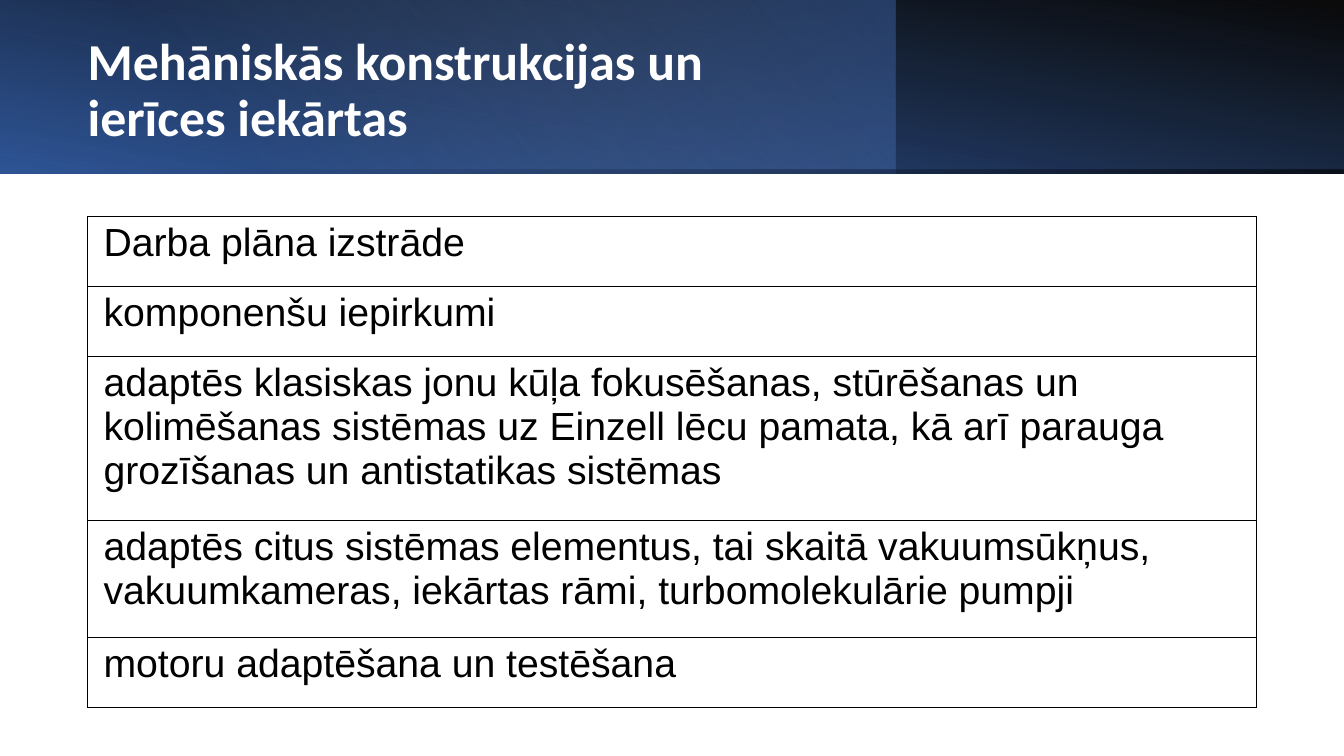
"""Build a slide with a gradient title band and a table of work steps."""
from dataclasses import dataclass

import pptx
import pptx.dml.color
import pptx.enum.shapes
import pptx.enum.text
import pptx.oxml
import pptx.oxml.ns
import pptx.util
from lxml import etree

Pt = pptx.util.Pt
RGB = pptx.dml.color.RGBColor
qn = pptx.oxml.ns.qn

BLACK = RGB(0x00, 0x00, 0x00)
WHITE = RGB(0xFF, 0xFF, 0xFF)
NAVY = RGB(0x2F, 0x55, 0x97)
BLUE = RGB(0x44, 0x72, 0xC4)
PALE = RGB(0x8F, 0xAA, 0xDC)

WIDE, HIGH, BAND = 960, 540, 124


@dataclass(frozen=True)
class Stop:
    pos: int
    color: RGB
    alpha: int


@dataclass(frozen=True)
class Layer:
    width: float
    angle: int
    stops: tuple[Stop, ...]
    turn: int = 0
    flip: bool = False


@dataclass(frozen=True)
class Row:
    high: float
    text: str


LAYERS = (
    Layer(WIDE, 260, (Stop(0, BLACK, 96), Stop(100, NAVY, 100)), 180, True),
    Layer(640, 320, (Stop(26, PALE, 0), Stop(100, BLUE, 41))),
    Layer(WIDE, 100, (Stop(22, BLUE, 15), Stop(100, BLACK, 63)), 0, True),
)

TITLE = "Mehāniskās konstrukcijas un ierīces iekārtas"

ROWS = (
    Row(50, "Darba plāna izstrāde"),
    Row(50, "komponenšu iepirkumi"),
    Row(117, "adaptēs klasiskas jonu kūļa fokusēšanas, stūrēšanas un "
        "kolimēšanas sistēmas uz Einzell lēcu pamata, kā arī parauga "
        "grozīšanas un antistatikas sistēmas"),
    Row(83.5, "adaptēs citus sistēmas elementus, tai skaitā vakuumsūkņus, "
        "vakuumkameras, iekārtas rāmi, turbomolekulārie pumpji"),
    Row(50, "motoru adaptēšana un testēšana"),
)

HEAD = {"name": "Calibri", "size": Pt(37), "bold": True}
BODY = {"name": "Arial", "size": Pt(28), "bold": False}
INSET = {"margin_left": Pt(11.5), "margin_right": Pt(11.5),
         "margin_top": Pt(3.6), "margin_bottom": Pt(3.6)}


def style(item: object, form: dict) -> None:
    for key, value in form.items():
        setattr(item, key, value)


def write(frame, text: str, form: dict, color: RGB):
    line = frame.paragraphs[0]
    run = line.add_run()
    run.text = text
    style(run.font, form)
    run.font.color.rgb = color
    return line


def draw_layer(slide, layer: Layer) -> None:
    kind = pptx.enum.shapes.MSO_SHAPE.RECTANGLE
    rect = slide.shapes.add_shape(kind, 0, 0, Pt(layer.width), Pt(BAND))
    rect.shadow.inherit = False
    rect.line.fill.background()
    rect.rotation = layer.turn
    if layer.flip:
        rect.element.spPr.xfrm.set("flipH", "1")
    rect.fill.gradient()
    rect.fill.gradient_angle = 360 - layer.angle
    stops = rect.element.spPr.find(".//" + qn("a:gsLst"))
    for old in list(stops):
        stops.remove(old)
    for stop in layer.stops:
        mark = etree.SubElement(stops, qn("a:gs"), pos=str(stop.pos * 1000))
        tint = etree.SubElement(mark, qn("a:srgbClr"), val=str(stop.color))
        etree.SubElement(tint, qn("a:alpha"), val=str(stop.alpha * 1000))


def draw_title(slide) -> None:
    box = slide.shapes.add_textbox(Pt(55.5), Pt(19.5), Pt(556), Pt(91.5))
    frame = box.text_frame
    style(frame, {"word_wrap": True,
                  "vertical_anchor": pptx.enum.text.MSO_ANCHOR.MIDDLE})
    write(frame, TITLE, HEAD, WHITE).line_spacing = 0.9


def add_edges(cell) -> None:
    props = cell._tc.get_or_add_tcPr()
    for spot, side in enumerate("LRTB"):
        edge = etree.Element(qn(f"a:ln{side}"), w=str(Pt(0.5)))
        fill = etree.SubElement(edge, qn("a:solidFill"))
        etree.SubElement(fill, qn("a:srgbClr"), val=str(BLACK))
        props.insert(spot, edge)


def draw_table(slide) -> None:
    high = sum(row.high for row in ROWS)
    table = slide.shapes.add_table(
        len(ROWS), 1, Pt(62.5), Pt(154.5), Pt(835), Pt(high)).table
    style(table, {"first_row": False, "horz_banding": False})
    for spot, row in enumerate(ROWS):
        table.rows[spot].height = Pt(row.high)
        cell = table.cell(spot, 0)
        style(cell, INSET)
        cell.fill.background()
        add_edges(cell)
        write(cell.text_frame, row.text, BODY, BLACK)


def main() -> None:
    deck = pptx.Presentation()
    style(deck, {"slide_width": Pt(WIDE), "slide_height": Pt(HIGH)})
    slide = deck.slides.add_slide(deck.slide_layouts[6])
    for layer in LAYERS:
        draw_layer(slide, layer)
    draw_title(slide)
    draw_table(slide)
    deck.save("out.pptx")


if __name__ == "__main__":
    main()
